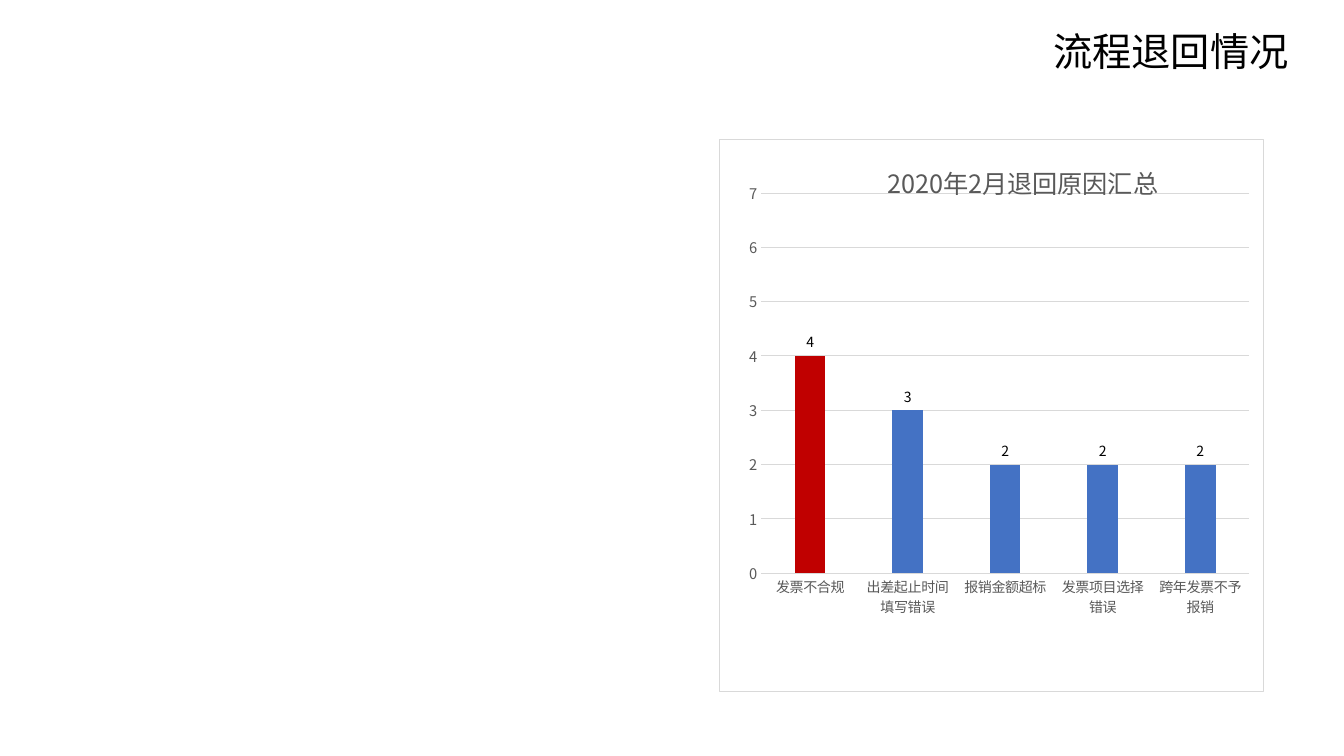
from dataclasses import dataclass

from lxml.etree import SubElement
from pptx import Presentation
from pptx.chart.data import CategoryChartData
from pptx.dml.color import RGBColor
from pptx.enum.chart import XL_CHART_TYPE, XL_LABEL_POSITION, XL_TICK_MARK
from pptx.enum.text import MSO_ANCHOR, PP_ALIGN
from pptx.oxml import parse_xml
from pptx.oxml.ns import nsdecls, qn
from pptx.util import Inches, Pt


@dataclass(frozen=True)
class Theme:
    """Colours, font and type sizes of the slide."""
    font: str = "Noto Sans CJK SC"
    ink: str = "000000"
    muted: str = "595959"
    rule: str = "D9D9D9"
    paper: str = "FFFFFF"
    bar: str = "4472C4"
    highlight: str = "C00000"
    heading: float = 28
    chart_title: float = 18
    value_axis: float = 10.5
    body: float = 10
    rule_width: float = 0.75


THEME = Theme()
REASONS = {
    "发票不合规": 4,
    "出差起止时间填写错误": 3,
    "报销金额超标": 2,
    "发票项目选择错误": 2,
    "跨年发票不予报销": 2,
}


def set_values(target, values):
    """Set attributes of an object from a dict."""
    for name, value in values.items():
        setattr(target, name, value)


def style_font(font, size, colour):
    """Give a font the theme typeface, a size and a colour."""
    set_values(font, {"name": THEME.font, "size": Pt(size), "bold": False})
    font.color.rgb = RGBColor.from_string(colour)


def style_line(line):
    """Give a line the thin grey rule format."""
    line.color.rgb = RGBColor.from_string(THEME.rule)
    line.width = Pt(THEME.rule_width)


def match_east_asian(element):
    """Use each Latin typeface for East Asian text as well."""
    for latin in list(element.iter(qn("a:latin"))):
        latin.addnext(parse_xml(
            f'<a:ea {nsdecls("a")} typeface="{latin.get("typeface")}"/>'))


def set_layout(parent, index, values):
    """Place a chart part by fractions of the chart area."""
    for old in parent.findall(qn("c:layout")):
        parent.remove(old)
    layout = parse_xml(f'<c:layout {nsdecls("c")}><c:manualLayout/></c:layout>')
    for name, value in values.items():
        SubElement(layout[0], qn(f"c:{name}")).set("val", str(value))
    parent.insert(index, layout)


def add_heading(page, left, top, width, height):
    """Add the slide heading."""
    box = page.shapes.add_textbox(left, top, width, height)
    set_values(box.text_frame, {
        "word_wrap": True,
        "vertical_anchor": MSO_ANCHOR.MIDDLE,
    })
    para = box.text_frame.paragraphs[0]
    set_values(para, {"line_spacing": 0.9, "alignment": PP_ALIGN.LEFT})
    span = para.add_run()
    span.text = "流程退回情况"
    style_font(span.font, THEME.heading, THEME.ink)
    match_east_asian(box.element)


def style_axes(chart):
    """Format both axes and the gridlines."""
    category, value = chart.category_axis, chart.value_axis
    set_values(value, {
        "minimum_scale": 0,
        "maximum_scale": 7,
        "major_unit": 1,
        "has_major_gridlines": True,
    })
    for axis, size in ((category, THEME.body), (value, THEME.value_axis)):
        set_values(axis, {
            "major_tick_mark": XL_TICK_MARK.NONE,
            "minor_tick_mark": XL_TICK_MARK.NONE,
        })
        style_font(axis.tick_labels.font, size, THEME.muted)
    style_line(category.format.line)
    style_line(value.major_gridlines.format.line)
    value.format.line.fill.background()


def style_bars(plot):
    """Colour the bars, mark the top reason and label the values."""
    set_values(plot, {
        "gap_width": 219,
        "overlap": -27,
        "vary_by_categories": False,
    })
    series = plot.series[0]
    for part, colour in ((series, THEME.bar),
                         (series.points[0], THEME.highlight)):
        part.format.fill.solid()
        part.format.fill.fore_color.rgb = RGBColor.from_string(colour)
    labels = series.data_labels
    set_values(labels, {
        "show_value": True,
        "position": XL_LABEL_POSITION.OUTSIDE_END,
    })
    style_font(labels.font, THEME.body, THEME.ink)


def add_reason_chart(page, left, top, width, height):
    """Add the column chart of return reasons."""
    data = CategoryChartData()
    data.categories = list(REASONS)
    data.add_series("Series 1", list(REASONS.values()))
    chart = page.shapes.add_chart(XL_CHART_TYPE.COLUMN_CLUSTERED,
                                  left, top, width, height, data).chart
    set_values(chart, {"has_legend": False, "has_title": True})
    style_font(chart.font, THEME.body, THEME.ink)
    span = chart.chart_title.text_frame.paragraphs[0].add_run()
    span.text = "2020年2月退回原因汇总"
    style_font(span.font, THEME.chart_title, THEME.muted)
    style_axes(chart)
    style_bars(chart.plots[0])

    area = chart.element.find(qn("c:chart"))
    title = area.find(qn("c:title"))
    set_layout(title, 1, {"xMode": "edge", "yMode": "edge",
                          "x": 0.3, "y": 0.03})
    title.find(qn("c:overlay")).set("val", "1")
    set_layout(area.find(qn("c:plotArea")), 0, {
        "layoutTarget": "inner", "xMode": "edge", "yMode": "edge",
        "x": 0.077, "y": 0.097, "w": 0.896, "h": 0.688})
    area.addnext(parse_xml(
        f'<c:spPr {nsdecls("c", "a")}>'
        f'<a:solidFill><a:srgbClr val="{THEME.paper}"/></a:solidFill>'
        f'<a:ln w="{Pt(THEME.rule_width)}"><a:solidFill>'
        f'<a:srgbClr val="{THEME.rule}"/></a:solidFill></a:ln></c:spPr>'))
    match_east_asian(chart.element)


def main():
    """Build and save the deck."""
    deck = Presentation()
    set_values(deck, {"slide_width": Inches(13.33),
                      "slide_height": Inches(7.5)})
    page = deck.slides.add_slide(deck.slide_layouts[6])
    add_heading(page, Inches(10.35), Inches(0.28), Inches(2.85), Inches(0.5))
    add_reason_chart(page, Inches(7.13), Inches(1.38),
                     Inches(5.41), Inches(5.49))
    deck.save("out.pptx")


if __name__ == "__main__":
    main()
